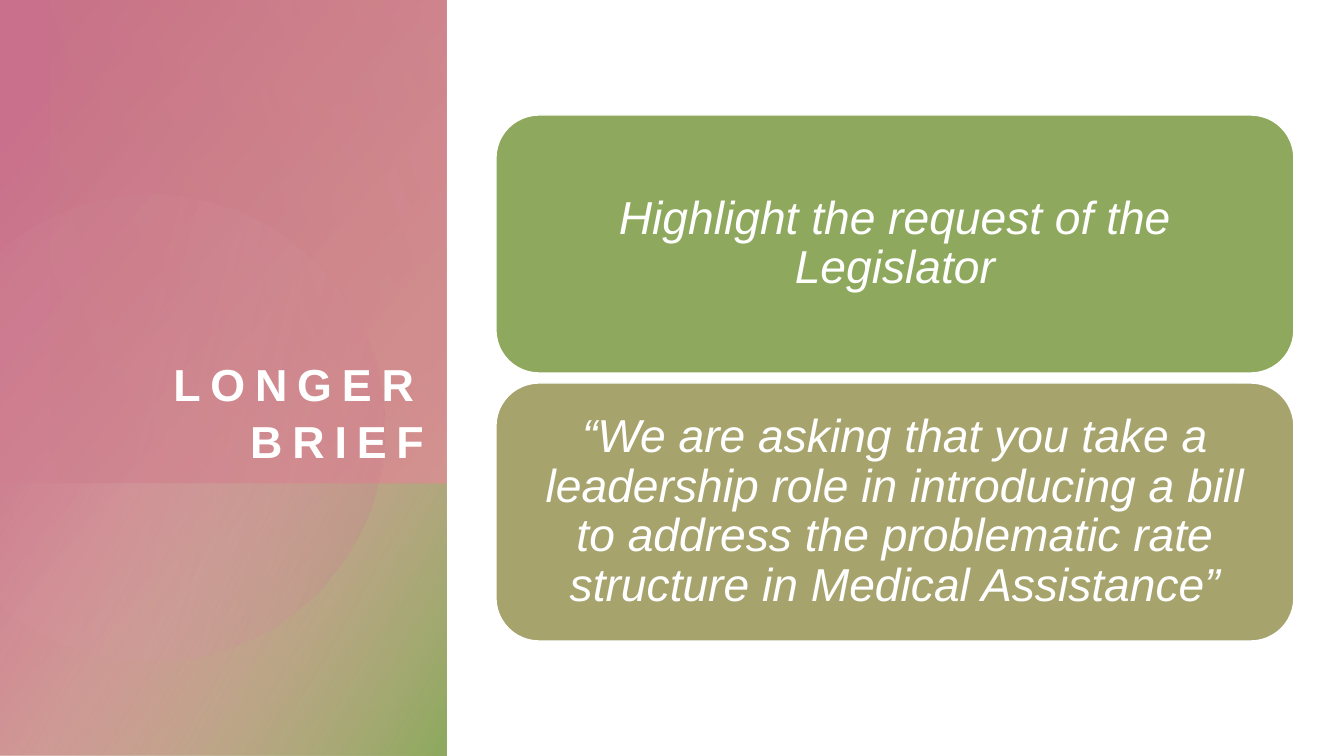
import math
from dataclasses import dataclass

import pptx
import pptx.dml.color
import pptx.enum.shapes
import pptx.enum.text
import pptx.oxml
import pptx.oxml.ns
import pptx.util

PX = 914400 / 100.8
SLIDE_W, SLIDE_H = 1344, 756


@dataclass(frozen=True)
class Theme:
    font: str = "Arial"
    white: str = "FFFFFF"
    rose: str = "C9708C"
    salmon: str = "D3918A"
    blush: str = "E5BDB9"
    pale_rose: str = "DFA9BA"
    tan: str = "C59766"
    green: str = "8EA95E"
    olive: str = "A7A36D"
    title_size: int = 32
    title_tracking: int = 7
    card_size: int = 33


THEME = Theme()


def px(n):
    return pptx.util.Emu(round(n * PX))


def rgb(color):
    return pptx.dml.color.RGBColor.from_string(color)


def style_runs(p, size, bold=False, italic=False):
    for r in p.runs:
        r.font.name = THEME.font
        r.font.size = pptx.util.Pt(size)
        r.font.bold, r.font.italic = bold, italic
        r.font.color.rgb = rgb(THEME.white)


def fill_gradient(sp, stops, angle):
    """Fill with (position %, colour, opacity %) stops; angle is clockwise degrees."""
    sp.shadow.inherit = False
    sp.line.fill.background()
    gs = "".join(
        f'<a:gs pos="{pos * 1000}"><a:srgbClr val="{color}">'
        f'<a:alpha val="{opacity * 1000}"/></a:srgbClr></a:gs>'
        for pos, color, opacity in stops)
    grad = pptx.oxml.parse_xml(
        f'<a:gradFill {pptx.oxml.ns.nsdecls("a")} rotWithShape="1"><a:gsLst>{gs}</a:gsLst>'
        f'<a:lin ang="{angle * 60000}" scaled="0"/></a:gradFill>')
    geometry = sp.element.spPr.find(pptx.oxml.ns.qn("a:custGeom"))
    if geometry is None:
        geometry = sp.element.spPr.find(pptx.oxml.ns.qn("a:prstGeom"))
    geometry.addnext(grad)


def add_gradient_rect(s, x, y, w, h, stops, angle):
    sp = s.shapes.add_shape(pptx.enum.shapes.MSO_SHAPE.RECTANGLE, px(x), px(y), px(w), px(h))
    fill_gradient(sp, stops, angle)


def add_cut_disc(s, left, cx, cy, radius):
    """Draw a faint disc cut off by the vertical line at left."""
    reach = math.acos((left - cx) / radius)
    steps = 120
    angles = [reach * (2 * i / steps - 1) for i in range(steps + 1)]
    points = [(round((cx + radius * math.cos(a)) * PX), round((cy + radius * math.sin(a)) * PX))
              for a in angles]
    builder = s.shapes.build_freeform(*points[0])
    builder.add_line_segments(points[1:], close=True)
    fill_gradient(builder.convert_to_shape(),
                  [(36, THEME.pale_rose, 6), (100, THEME.rose, 26)], 14)


def add_sidebar(s, x, y, w, h):
    foot = 272
    add_gradient_rect(s, x, y, w, h, [(8, THEME.rose, 100), (100, THEME.salmon, 89)], 40)
    add_gradient_rect(s, x, y + h - foot, w, foot,
                      [(0, THEME.blush, 0), (99, THEME.green, 100)], 30)
    add_cut_disc(s, x, x + 152, y + 428, 233)
    add_gradient_rect(s, x + 50, y, w - 50, h - foot,
                      [(0, THEME.salmon, 29), (100, THEME.tan, 0)], 160)
    add_title(s, x + 50, y + 96, w - 72, 371, "LONGER BRIEF")


def add_title(s, x, y, w, h, text):
    title = s.shapes.title
    title.element.getparent().append(title.element)  # in front of the sidebar
    title.left, title.top, title.width, title.height = px(x), px(y), px(w), px(h)
    tf = title.text_frame
    tf.text = text
    tf.word_wrap = True
    tf.auto_size = pptx.enum.text.MSO_AUTO_SIZE.NONE
    tf.vertical_anchor = pptx.enum.text.MSO_ANCHOR.BOTTOM
    tf.margin_left = tf.margin_right = tf.margin_top = tf.margin_bottom = 0
    p = tf.paragraphs[0]
    p.alignment = pptx.enum.text.PP_ALIGN.RIGHT
    p.line_spacing = 1.05
    style_runs(p, THEME.title_size, bold=True)
    for r in p.runs:
        r.font._element.set("spc", str(THEME.title_tracking * 100))


def add_card(s, x, y, w, h, text, color):
    sp = s.shapes.add_shape(pptx.enum.shapes.MSO_SHAPE.ROUNDED_RECTANGLE,
                            px(x), px(y), px(w), px(h))
    sp.shadow.inherit = False
    sp.fill.solid()
    sp.fill.fore_color.rgb = rgb(color)
    sp.line.color.rgb = rgb(THEME.white)
    sp.line.width = pptx.util.Pt(1)
    tf = sp.text_frame
    tf.text = text
    tf.word_wrap = True
    tf.vertical_anchor = pptx.enum.text.MSO_ANCHOR.MIDDLE
    tf.margin_left = tf.margin_right = tf.margin_top = tf.margin_bottom = px(14)
    p = tf.paragraphs[0]
    p.alignment = pptx.enum.text.PP_ALIGN.CENTER
    p.line_spacing = 0.9
    style_runs(p, THEME.card_size, italic=True)


def add_cards(s, x, y, w, h, cards):
    gap = 10
    card_h = (h - gap * (len(cards) - 1)) / len(cards)
    for i, (text, color) in enumerate(cards):
        add_card(s, x, y + i * (card_h + gap), w, card_h, text, color)


def main():
    prs = pptx.Presentation()
    prs.slide_width, prs.slide_height = px(SLIDE_W), px(SLIDE_H)
    title_only = prs.slide_layouts[5]
    s = prs.slides.add_slide(title_only)
    add_sidebar(s, 0, 0, 446, SLIDE_H)
    add_cards(s, 496, 115, 798, 526, [
        ("Highlight the request of the Legislator", THEME.green),
        ("“We are asking that you take a leadership role in introducing a bill to address "
         "the problematic rate structure in Medical Assistance”", THEME.olive),
    ])
    prs.save("out.pptx")


if __name__ == "__main__":
    main()
